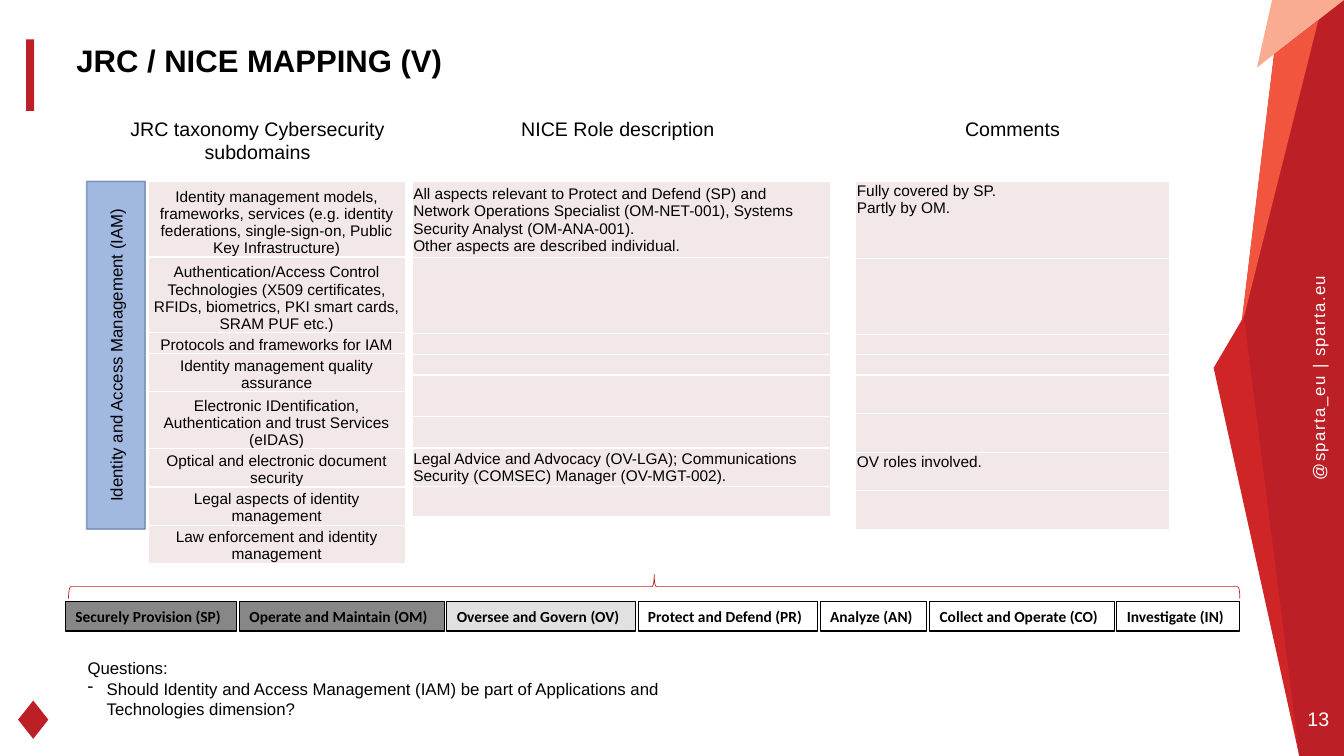
from lxml.etree import SubElement
from pptx import Presentation
from pptx.dml.color import RGBColor
from pptx.enum.shapes import MSO_SHAPE
from pptx.enum.text import MSO_ANCHOR, PP_ALIGN
from pptx.oxml.ns import qn
from pptx.util import Emu, Inches, Pt

BLACK = RGBColor(0x00, 0x00, 0x00)
WHITE = RGBColor(0xFF, 0xFF, 0xFF)
RED = RGBColor(0xBC, 0x20, 0x26)
CRIMSON = RGBColor(0xD0, 0x25, 0x27)
CORAL = RGBColor(0xF1, 0x55, 0x3D)
PEACH = RGBColor(0xF9, 0xAC, 0x91)
BLUSH = RGBColor(0xF3, 0xE8, 0xE8)
BLUE = RGBColor(0x44, 0x72, 0xC4)
NAVY = RGBColor(0x2F, 0x52, 0x8F)
GREY = RGBColor(0x87, 0x87, 0x87)
SILVER = RGBColor(0xE1, 0xE1, 0xE1)

COLS, ROWS = 160, 90
CELL = Inches(1) // 12
LEFT, MID = PP_ALIGN.LEFT, PP_ALIGN.CENTER
TOP, CENTRE, BASE = MSO_ANCHOR.TOP, MSO_ANCHOR.MIDDLE, MSO_ANCHOR.BOTTOM


def grid(*units):
    return [Emu(round(unit * CELL)) for unit in units]


class Board:
    font = "Arial"

    def __init__(self, deck):
        self.slide = deck.slides.add_slide(deck.slide_layouts[6])
        self.shapes = self.slide.shapes

    def letter(self, frame, lines, size, color=BLACK, bold=False, align=LEFT, font=None, track=0):
        for i, line in enumerate(lines):
            para = frame.paragraphs[0] if i == 0 else frame.add_paragraph()
            para.alignment = align
            run = para.add_run()
            run.text = line
            run.font.name = font or self.font
            run.font.size = Pt(size)
            run.font.bold = bold
            run.font.color.rgb = color
            if track:
                run.font._element.set("spc", str(track))

    def text(self, box, lines, size, anchor=TOP, inset=True, turn=0, **style):
        shape = self.shapes.add_textbox(*grid(*box))
        shape.rotation = turn
        frame = shape.text_frame
        frame.word_wrap = inset
        frame.vertical_anchor = anchor
        if not inset:
            frame.margin_left = frame.margin_right = 0
            frame.margin_top = frame.margin_bottom = 0
        self.letter(frame, lines, size, **style)
        return frame

    def paint(self, shape, fill=None, line=None, width=1):
        shape.shadow.inherit = False
        if fill is None:
            shape.fill.background()
        else:
            shape.fill.solid()
            shape.fill.fore_color.rgb = fill
        if line is None:
            shape.line.fill.background()
        else:
            shape.line.color.rgb = line
            shape.line.width = Pt(width)
        return shape

    def block(self, box, kind=MSO_SHAPE.RECTANGLE, **style):
        return self.paint(self.shapes.add_shape(kind, *grid(*box)), **style)

    def facet(self, points, fill):
        first, *rest = [grid(*point) for point in points]
        build = self.shapes.build_freeform(*first)
        build.add_line_segments(rest, close=True)
        self.paint(build.convert_to_shape(), fill)

    def chip(self, box, label, fill):
        shape = self.block(box, fill=fill, line=BLACK, width=0.75)
        shape.text_frame.word_wrap = False
        shape.text_frame.vertical_anchor = TOP
        self.letter(shape.text_frame, [label], 11, bold=True, font="Calibri")

    def fade(self, shape, share):
        for color in shape._element.spPr.iter(qn("a:srgbClr")):
            SubElement(color, qn("a:alpha")).set("val", str(share * 1000))

    def edge(self, cell):
        props = cell._tc.get_or_add_tcPr()
        for i, side in enumerate(("lnL", "lnR", "lnT", "lnB")):
            line = props.makeelement(qn(f"a:{side}"), {"w": str(Pt(1))})
            solid = SubElement(line, qn("a:solidFill"))
            SubElement(solid, qn("a:srgbClr")).set("val", str(WHITE))
            props.insert(i, line)

    def table(self, left, width, rows, anchor, align=LEFT):
        top = 21.6
        high = sum(row[0] for row in rows)
        table = self.shapes.add_table(len(rows), 1, *grid(left, top, width, high)).table
        table.first_row = table.horz_banding = False
        for i, (tall, *lines) in enumerate(rows):
            table.rows[i].height = grid(tall)[0]
            cell = table.cell(i, 0)
            cell.fill.solid()
            cell.fill.fore_color.rgb = BLUSH
            cell.margin_left = cell.margin_right = cell.margin_top = Inches(0.01)
            cell.margin_bottom = 0
            cell.vertical_anchor = anchor
            self.edge(cell)
            if lines:
                self.letter(cell.text_frame, lines, 11, align=align)
            else:
                para = cell.text_frame.paragraphs[0]._p
                SubElement(para, qn("a:endParaRPr")).set("sz", "600")

    def dash(self, para):
        props = para._p.get_or_add_pPr()
        props.set("marL", str(Inches(0.19)))
        props.set("indent", str(-Inches(0.19)))
        SubElement(props, qn("a:buChar")).set("char", "-")


FACETS = [
    (RED, [(160, 0), (160, 90), (154.68, 90), (146.76, 47.28), (151.68, 6.48), (153.12, 0)]),
    (PEACH, [(160, 0), (149.64, 8.04), (151.44, 0)]),
    (CORAL, [(156.96, 2.4), (147.72, 39.24), (151.68, 6.48)]),
    (CRIMSON, [(148.08, 37.68), (154.68, 90), (144.48, 43.8)]),
]
TOPICS = [
    (9, "Identity management models, frameworks, services (e.g. identity federations, single-sign-on, Public Key Infrastructure)"),
    (9, "Authentication/Access Control Technologies (X509 certificates, RFIDs, biometrics, PKI smart cards, SRAM PUF etc.)"),
    (2.5, "Protocols and frameworks for IAM"),
    (4.5, "Identity management quality assurance"),
    (6.8, "Electronic IDentification, Authentication and trust Services (eIDAS)"),
    (4.55, "Optical and electronic document security"),
    (4.55, "Legal aspects of identity management"),
    (4.5, "Law enforcement and identity management"),
]
ROLES = [
    (9.1, "All aspects relevant to Protect and Defend (SP) and",
     "Network Operations Specialist (OM-NET-001), Systems Security Analyst (OM-ANA-001).",
     "Other aspects are described individual."),
    (9.05,), (2.45,), (2.45,), (4.9,), (3.8,),
    (4.6, "Legal Advice and Advocacy (OV-LGA); Communications Security (COMSEC) Manager (OV-MGT-002)."),
    (3.6,),
]
NOTES = [
    (9.15, "Fully covered by SP.", "Partly by OM."),
    (9.1,), (2.4,), (2.4,), (4.6,), (4.6,), (4.6, "OV roles involved."), (4.6,),
]
HEADS = [
    (14.16, 33, "JRC taxonomy Cybersecurity subdomains"),
    (60, 27.12, "NICE Role description"),
    (101.88, 37.32, "Comments"),
]
CHIPS = [
    (20.4, "Securely Provision (SP)", GREY),
    (24.36, "Operate and Maintain (OM)", GREY),
    (22.44, "Oversee and Govern (OV)", SILVER),
    (21.36, "Protect and Defend (PR)", None),
    (12.72, "Analyze (AN)", None),
    (21.96, "Collect and Operate (CO)", None),
    (14.64, "Investigate (IN)", None),
]


def main():
    deck = Presentation()
    deck.slide_width, deck.slide_height = grid(COLS, ROWS)
    board = Board(deck)

    for fill, points in FACETS:
        board.facet(points, fill)
    board.text((144.6, 43.8, 24.72, 2.4), ["@sparta_eu | sparta.eu"], 12, CENTRE,
               inset=False, turn=270, color=WHITE, align=MID, track=100)
    board.text((155.52, 84.12, 2.88, 2.88), ["13"], 14, CENTRE,
               inset=False, color=WHITE, align=MID)
    board.block((3.12, 4.68, 0.96, 8.52), fill=RED)
    board.block((2.16, 83.4, 3.6, 4.56), MSO_SHAPE.DIAMOND, fill=RED)

    board.table(49.08, 49.8, ROLES, CENTRE)
    board.table(101.88, 37.32, NOTES, TOP)
    for left, width, label in HEADS:
        board.text((left, 13.32, width, 6.84), [label], 14, align=MID)

    domain = board.block((10.32, 21.6, 6.96, 41.4), fill=BLUE, line=NAVY)
    board.fade(domain, 50)
    domain.text_frame.vertical_anchor = CENTRE
    domain.text_frame._txBody.bodyPr.set("vert", "vert270")
    board.letter(domain.text_frame, ["Identity and Access Management (IAM)"], 12, align=MID)

    left, gap = 7.8, 0.32
    for width, label, fill in CHIPS:
        board.chip((left, 71.64, width, 3.48), label, fill)
        left += width + gap
    brace = board.block((76.44, 0.12, 2.88, 139.44), MSO_SHAPE.LEFT_BRACE, line=RED, width=0.5)
    brace.rotation = 90

    asks = board.text((9.24, 77.76, 77.88, 8.52), [
        "Questions:",
        "Should Identity and Access Management (IAM) be part of Applications and Technologies dimension?",
    ], 12)
    board.dash(asks.paragraphs[1])

    board.table(17.64, 30.6, TOPICS, BASE, MID)
    title = board.text((7.92, 4.92, 136.08, 5.04), ["JRC / NICE MAPPING (V)"], 22.2, BASE, bold=True)
    title.paragraphs[0].line_spacing = 0.8
    deck.save("out.pptx")


if __name__ == "__main__":
    main()
